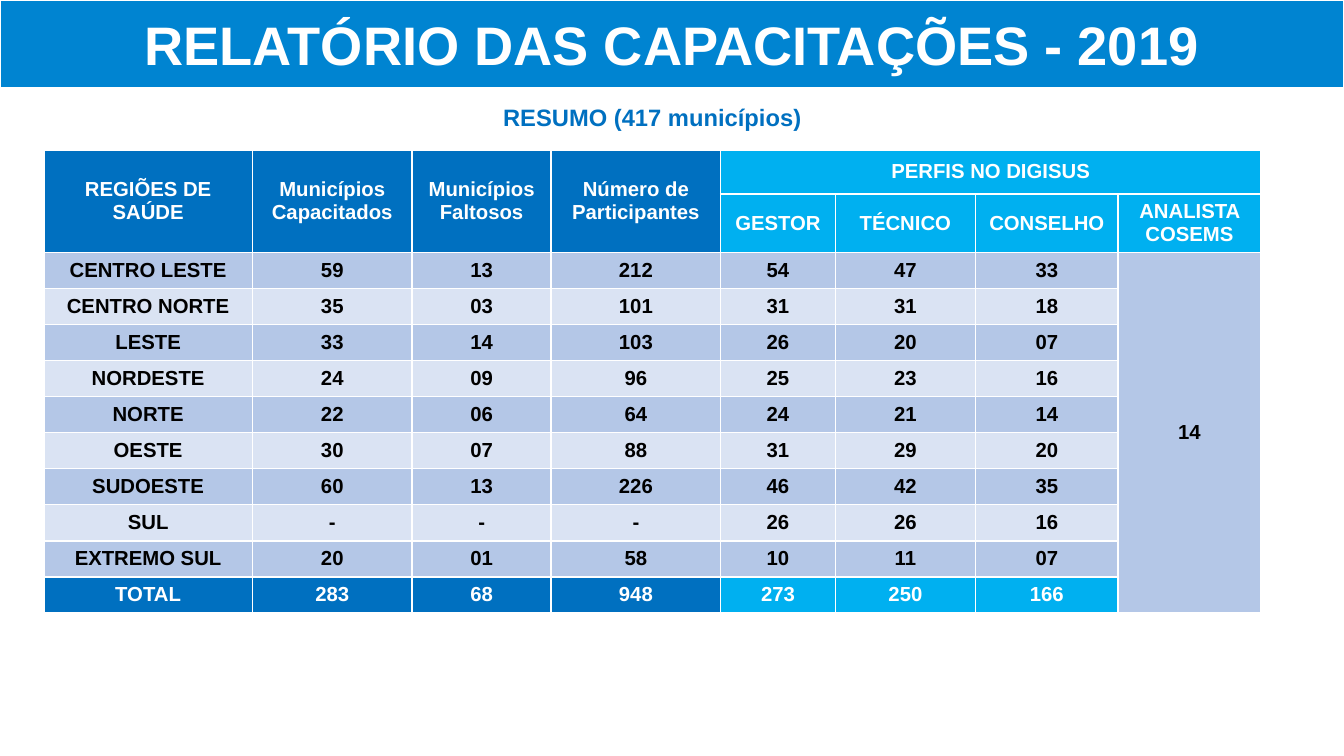
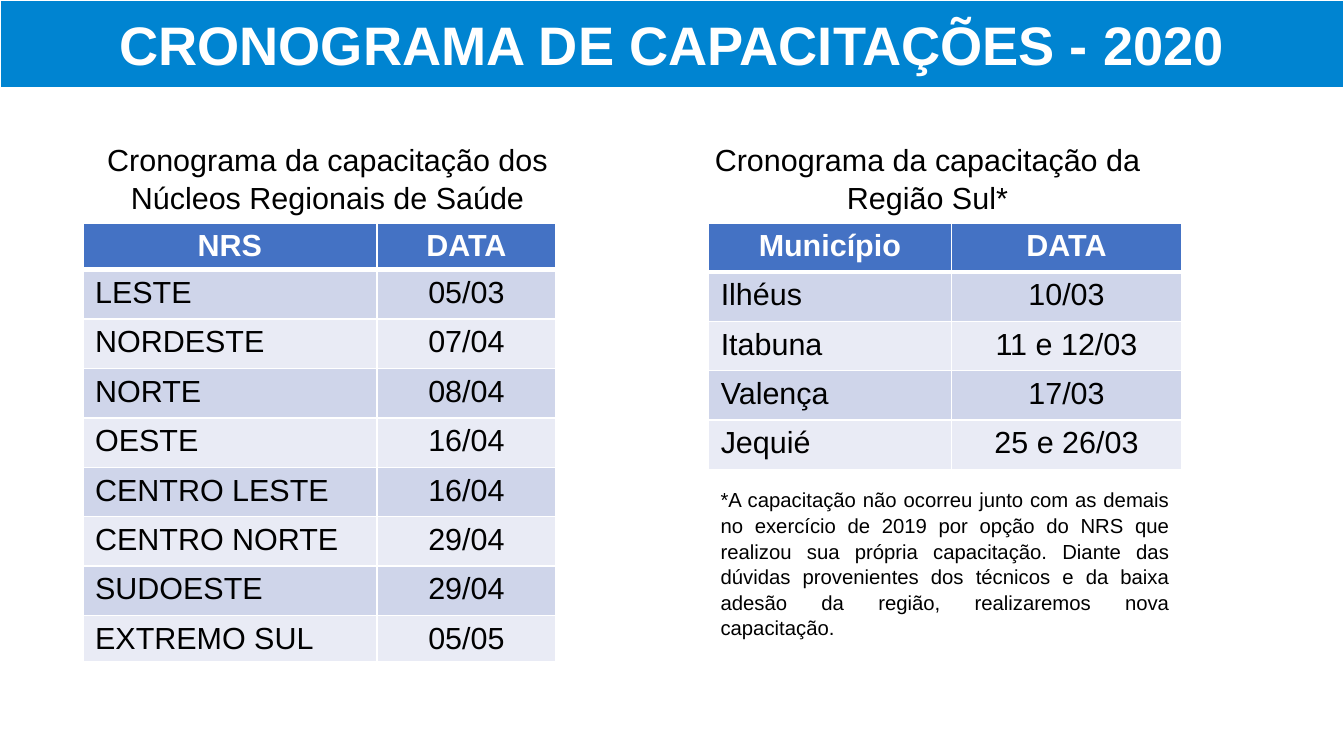
from lxml import etree
from pptx import Presentation
from pptx.dml.color import RGBColor
from pptx.enum.shapes import MSO_SHAPE
from pptx.enum.text import MSO_ANCHOR, PP_ALIGN
from pptx.oxml.ns import qn
from pptx.util import Inches, Pt

RECT = MSO_SHAPE.RECTANGLE
MID, TOP = MSO_ANCHOR.MIDDLE, MSO_ANCHOR.TOP
LEFT, CENTER, JUST = PP_ALIGN.LEFT, PP_ALIGN.CENTER, PP_ALIGN.JUSTIFY
WIDTH, HEIGHT, BAND = 11.02, 6.2, 0.72
FONT = "Arial"
COLORS = {
    "white": "FFFFFF", "black": "000000", "band": "0084D1",
    "navy": "0070C0", "sky": "00B0F0", "dark": "B4C7E7", "pale": "DAE3F3",
    "head": "4472C4", "odd": "CFD5EA", "even": "E9EBF5",
}

REGIONS = [
    ("CENTRO LESTE", "59", "13", "212", "54", "47", "33"),
    ("CENTRO NORTE", "35", "03", "101", "31", "31", "18"),
    ("LESTE", "33", "14", "103", "26", "20", "07"),
    ("NORDESTE", "24", "09", "96", "25", "23", "16"),
    ("NORTE", "22", "06", "64", "24", "21", "14"),
    ("OESTE", "30", "07", "88", "31", "29", "20"),
    ("SUDOESTE", "60", "13", "226", "46", "42", "35"),
    ("SUL", "-", "-", "-", "26", "26", "16"),
    ("EXTREMO SUL", "20", "01", "58", "10", "11", "07"),
]
TOTAL = ("TOTAL", "283", "68", "948", "273", "250", "166")
HEADS = ("REGIÕES DE SAÚDE", "Municípios Capacitados",
         "Municípios Faltosos", "Número de Participantes")
ROLES = ("GESTOR", "TÉCNICO", "CONSELHO", "ANALISTA COSEMS")

CENTERS = [
    ("NRS", "DATA"), ("LESTE", "05/03"), ("NORDESTE", "07/04"),
    ("NORTE", "08/04"), ("OESTE", "16/04"), ("CENTRO LESTE", "16/04"),
    ("CENTRO NORTE", "29/04"), ("SUDOESTE", "29/04"),
    ("EXTREMO SUL", "05/05"),
]
TOWNS = [
    ("Município", "DATA"), ("Ilhéus", "10/03"), ("Itabuna", "11 e 12/03"),
    ("Valença", "17/03"), ("Jequié", "25 e 26/03"),
]
NOTE = ("*A capacitação não ocorreu junto com as demais no exercício de 2019 "
        "por opção do NRS que realizou sua própria capacitação. Diante das "
        "dúvidas provenientes dos técnicos e da baixa adesão da região, "
        "realizaremos nova capacitação.")


def color(name):
    return RGBColor.from_string(COLORS[name])


class Deck:
    def __init__(self):
        self.prs = Presentation()
        self.prs.slide_width = Inches(WIDTH)
        self.prs.slide_height = Inches(HEIGHT)
        self.slide = None

    def page(self, title):
        """Start a slide with its title band."""
        self.slide = self.prs.slides.add_slide(self.prs.slide_layouts[6])
        band = self.slide.shapes.add_shape(
            RECT, 0, 0, Inches(WIDTH), Inches(BAND))
        band.shadow.inherit = False
        band.fill.solid()
        band.fill.fore_color.rgb = color("band")
        band.line.color.rgb = color("white")
        band.line.width = Pt(0.75)
        frame = band.text_frame
        frame.margin_left = frame.margin_right = 0
        frame.margin_top = frame.margin_bottom = 0
        frame.vertical_anchor = MID
        self.label(frame, title, 32, "white", True).space_after = Pt(6)

    def label(self, frame, text, size, tint, bold=False, align=CENTER):
        """Fill a text frame with one styled paragraph and return it."""
        para = frame.paragraphs[0]
        para.text = text
        para.alignment = align
        font = para.font
        font.name, font.size, font.bold = FONT, Pt(size), bold
        font.color.rgb = color(tint)
        return para

    def text(self, x, y, w, h, text, size, align=CENTER):
        box = self.slide.shapes.add_textbox(
            Inches(x), Inches(y), Inches(w), Inches(h))
        box.text_frame.word_wrap = True
        para = self.label(box.text_frame, text, size, "black", align=align)
        para.line_spacing = 1.05

    def table(self, x, y, cols, rows):
        """Add a bare table with white rules and return it."""
        frame = self.slide.shapes.add_table(
            len(rows), len(cols), Inches(x), Inches(y),
            Inches(sum(cols)), Inches(sum(rows)))
        grid = frame.table
        grid.first_row = grid.horz_banding = False
        for col, size in zip(grid.columns, cols):
            col.width = Inches(size)
        for row, size in zip(grid.rows, rows):
            row.height = Inches(size)
        for cell in grid.iter_cells():
            self.rule(cell)
        return grid

    def rule(self, cell, base=1):
        """Draw white cell borders; base is the width of the lower one."""
        props = cell._tc.get_or_add_tcPr()
        for old in list(props):
            props.remove(old)
        for side, width in (("L", 1), ("R", 1), ("T", 1), ("B", base)):
            line = etree.SubElement(props, qn("a:ln" + side), w=str(Pt(width)))
            fill = etree.SubElement(line, qn("a:solidFill"))
            etree.SubElement(fill, qn("a:srgbClr"), val=COLORS["white"])

    def cell(self, cell, text, fill, size, tint, bold=True, align=CENTER,
             anchor=MID):
        if fill:
            cell.fill.solid()
            cell.fill.fore_color.rgb = color(fill)
        else:
            cell.fill.background()
        cell.vertical_anchor = anchor
        self.label(cell.text_frame, text, size, tint, bold, align)

    def dates(self, x, y, cols, rows, data):
        """Add a two-column schedule with a header and banded rows."""
        grid = self.table(x, y, cols, rows)
        for r, line in enumerate(data):
            for c, text in enumerate(line):
                cell = grid.cell(r, c)
                if r == 0:
                    self.rule(cell, 3)
                    self.cell(cell, text, "head", 18, "white", anchor=TOP)
                else:
                    self.cell(cell, text, "odd" if r % 2 else "even", 18,
                              "black", False, CENTER if c else LEFT, TOP)


def report(deck):
    deck.page("RELATÓRIO DAS CAPACITAÇÕES - 2019")
    cols = [1.71, 1.31, 1.14, 1.39, 0.94, 1.15, 1.17, 1.17]
    body = len(REGIONS) + 1
    grid = deck.table(0.36, BAND, cols, [0.5, 0.37, 0.48] + [2.96 / body] * body)
    at = grid.cell
    last = len(cols) - 1
    split = len(HEADS)

    for c in range(len(cols)):
        deck.rule(at(0, c), 3)
    at(0, 0).merge(at(0, last))
    deck.cell(at(0, 0), "RESUMO (417 municípios)", None, 14, "navy")

    for c, text in enumerate(HEADS):
        at(1, c).merge(at(2, c))
        deck.cell(at(1, c), text, "navy", 12, "white")
    at(1, split).merge(at(1, last))
    deck.cell(at(1, split), "PERFIS NO DIGISUS", "sky", 12, "white")
    for c, text in enumerate(ROLES, split):
        deck.cell(at(2, c), text, "sky", 12, "white")

    for r, line in enumerate(REGIONS, 3):
        for c, text in enumerate(line):
            deck.cell(at(r, c), text, "dark" if r % 2 else "pale", 12, "black")
    end = 2 + body
    for c, text in enumerate(TOTAL):
        deck.cell(at(end, c), text, "navy" if c < split else "sky", 12, "white")
    at(3, last).merge(at(end, last))
    deck.cell(at(3, last), "14", "dark", 12, "black")


def plan(deck):
    deck.page("CRONOGRAMA DE CAPACITAÇÕES - 2020")
    deck.dates(0.68, 1.83, [2.41, 1.47], [0.38] + [2.84 / 7] * 7 + [0.38],
               CENTERS)
    deck.text(0.59, 1.09, 4.19, 0.71,
              "Cronograma da capacitação dos Núcleos Regionais de Saúde", 18)
    deck.text(5.51, 1.09, 4.19, 0.71,
              "Cronograma da capacitação da Região Sul*", 18)
    deck.dates(5.81, 1.83, [1.99, 1.89], [0.4] + [1.62 / 4] * 4, TOWNS)
    deck.text(5.81, 3.94, 3.88, 1.31, NOTE, 12, JUST)


def main():
    deck = Deck()
    report(deck)
    plan(deck)
    deck.prs.save("out.pptx")


if __name__ == "__main__":
    main()
